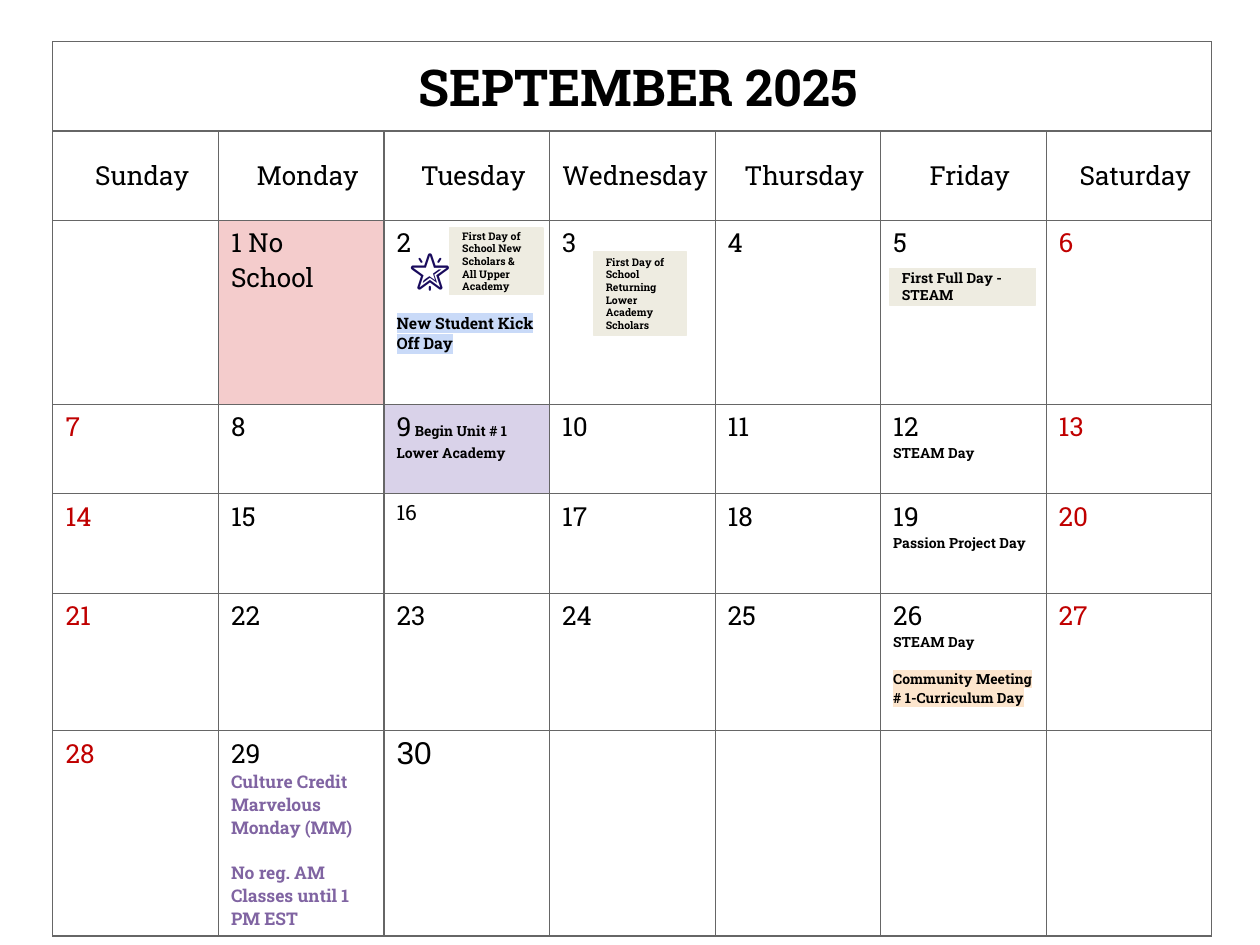
from dataclasses import dataclass

from lxml.etree import SubElement
from pptx import Presentation
from pptx.dml.color import RGBColor
from pptx.enum.shapes import MSO_SHAPE
from pptx.enum.text import MSO_ANCHOR, PP_ALIGN
from pptx.oxml import parse_xml
from pptx.oxml.ns import nsdecls, qn
from pptx.util import Inches, Pt

COLORS = {
    "text": "000000", "weekend": "C00000", "culture": "8064A2",
    "white": "FFFFFF", "border": "666666", "label": "EEECE1",
    "holiday": "F4CCCC", "unit": "D9D2E9", "kickoff": "C9DAF8",
    "meeting": "FCE5CD", "star": "180A5C",
}
FONT = "Roboto Slab"
WEEKDAYS = ["Sunday", "Monday", "Tuesday", "Wednesday", "Thursday", "Friday", "Saturday"]
ROW_HEIGHTS = [0.71, 0.71, 1.46, 0.71, 0.79, 1.09, 1.63]
COL_WIDTH = 1.314
LAST_DAY = 30
FIRST_COLUMN = 1  # the month starts on a Monday


@dataclass
class Run:
    text: str
    size: float = 15
    color: str = "text"
    bold: bool = False
    font: str = FONT
    highlight: str = ""


@dataclass
class Event:
    run: Run
    before: float = 0


@dataclass
class Label:
    text: str
    size: float
    left: float
    top: float
    width: float
    height: float


# Days whose first line is more than a plain date
DATE_LINES = {
    1: [Run("1 No School")],
    9: [Run("9"), Run(" Begin Unit # 1 Lower Academy", 8, bold=True)],
    16: [Run("16", 12)],
    30: [Run("30", 18, font="Arial")],
}
EVENTS = {
    2: [Event(Run("New Student Kick Off Day", 9, bold=True, highlight="kickoff"), 30)],
    12: [Event(Run("STEAM Day", 8, bold=True))],
    19: [Event(Run("Passion Project Day", 8, bold=True))],
    26: [Event(Run("STEAM Day", 8, bold=True)),
         Event(Run("Community Meeting # 1-Curriculum Day", 8, bold=True,
                   highlight="meeting"), 10.5)],
    29: [Event(Run("Culture Credit Marvelous Monday (MM)", 10, "culture", True)),
         Event(Run("No reg. AM Classes until 1 PM EST", 10, "culture", True), 13)],
}
DAY_FILLS = {1: "holiday", 9: "unit"}
LABELS = [
    Label("First Full Day - STEAM", 8, 7.06, 2.13, 1.16, 0.29),
    Label("First Day of School New Scholars & All Upper Academy", 6, 3.57, 1.81, 0.74, 0.53),
    Label("First Day of School Returning Lower Academy Scholars", 6, 4.71, 2, 0.74, 0.66),
]


def rgb(name: str) -> RGBColor:
    return RGBColor.from_string(COLORS[name])


def add_run(p, run: Run) -> None:
    r = p.add_run()
    r.text = run.text
    r.font.size = Pt(run.size)
    r.font.bold = run.bold
    r.font.name = run.font
    r.font.color.rgb = rgb(run.color)
    if run.highlight:
        highlight = parse_xml(
            f'<a:highlight {nsdecls("a")}>'
            f'<a:srgbClr val="{COLORS[run.highlight]}"/></a:highlight>')
        r.font._element.find(qn("a:solidFill")).addnext(highlight)


def set_margins(frame, left: float, top: float, right: float, bottom: float) -> None:
    frame.margin_left, frame.margin_top = Inches(left), Inches(top)
    frame.margin_right, frame.margin_bottom = Inches(right), Inches(bottom)


def style_cell(cell, fill: str = "white") -> None:
    cell.fill.solid()
    cell.fill.fore_color.rgb = rgb(fill)
    tc_pr = cell._tc.get_or_add_tcPr()
    for i, side in enumerate(("a:lnL", "a:lnR", "a:lnT", "a:lnB")):
        ln = tc_pr.makeelement(qn(side), {"w": str(Pt(0.75))})
        solid = SubElement(ln, qn("a:solidFill"))
        SubElement(solid, qn("a:srgbClr"), val=COLORS["border"])
        tc_pr.insert(i, ln)


def fill_day(cell, day: int, weekend: bool) -> None:
    set_margins(cell, 0.1, 0.04, 0.1, 0.04)
    tf = cell.text_frame
    plain = [Run(str(day), color="weekend" if weekend else "text")]
    for run in DATE_LINES.get(day, plain):
        add_run(tf.paragraphs[0], run)
    for event in EVENTS.get(day, []):
        p = tf.add_paragraph()
        p.space_before = Pt(event.before)
        add_run(p, event.run)


def add_calendar(slide) -> None:
    rows, cols = len(ROW_HEIGHTS), len(WEEKDAYS)
    table = slide.shapes.add_table(
        rows, cols, Inches(0.42), Inches(0.33),
        Inches(COL_WIDTH * cols), Inches(sum(ROW_HEIGHTS))).table
    table.first_row = table.horz_banding = False
    for column in table.columns:
        column.width = Inches(COL_WIDTH)
    for row, height in zip(table.rows, ROW_HEIGHTS):
        row.height = Inches(height)

    # Title row
    for col in range(cols):
        style_cell(table.cell(0, col))
    title = table.cell(0, 0)
    title.merge(table.cell(0, cols - 1))
    title.vertical_anchor = MSO_ANCHOR.MIDDLE
    set_margins(title, 0.1, 0.05, 0, 0.05)
    p = title.text_frame.paragraphs[0]
    p.alignment = PP_ALIGN.CENTER
    add_run(p, Run("SEPTEMBER 2025", 29, bold=True))

    # Weekday row
    for col, name in enumerate(WEEKDAYS):
        cell = table.cell(1, col)
        style_cell(cell)
        cell.vertical_anchor = MSO_ANCHOR.MIDDLE
        set_margins(cell, 0.1, 0, 0, 0)
        p = cell.text_frame.paragraphs[0]
        p.alignment = PP_ALIGN.LEFT if name == "Wednesday" else PP_ALIGN.CENTER
        add_run(p, Run(name))

    # Days
    for week in range(rows - 2):
        for col in range(cols):
            day = week * cols + col - FIRST_COLUMN + 1
            cell = table.cell(week + 2, col)
            style_cell(cell, DAY_FILLS.get(day, "white"))
            if 1 <= day <= LAST_DAY:
                fill_day(cell, day, weekend=col in (0, cols - 1))


def add_label(slide, label: Label) -> None:
    sp = slide.shapes.add_shape(
        MSO_SHAPE.RECTANGLE, Inches(label.left), Inches(label.top),
        Inches(label.width), Inches(label.height))
    sp.shadow.inherit = False
    sp.fill.solid()
    sp.fill.fore_color.rgb = rgb("label")
    sp.line.color.rgb = rgb("label")
    sp.line.width = Pt(0.75)
    tf = sp.text_frame
    tf.word_wrap = True
    tf.vertical_anchor = MSO_ANCHOR.MIDDLE
    set_margins(tf, 0.1, 0.1, 0.1, 0.1)
    p = tf.paragraphs[0]
    p.alignment = PP_ALIGN.LEFT
    add_run(p, Run(label.text, label.size, bold=True))


def add_star(slide) -> None:
    tf = slide.shapes.add_textbox(
        Inches(3.15), Inches(1.76), Inches(0.64), Inches(0.58)).text_frame
    tf.word_wrap = True
    set_margins(tf, 0.1, 0.1, 0.1, 0.1)
    p = tf.paragraphs[0]
    p.line_spacing = 1.2
    p.space_before = p.space_after = Pt(25)
    add_run(p, Run("🌟", 22.5, "star", True, "Arial"))


def main() -> None:
    prs = Presentation()
    prs.slide_width, prs.slide_height = Inches(10), Inches(7.5)
    slide = prs.slides.add_slide(prs.slide_layouts[6])
    add_calendar(slide)
    add_label(slide, LABELS[0])
    add_star(slide)
    for label in LABELS[1:]:
        add_label(slide, label)
    prs.save("out.pptx")


if __name__ == "__main__":
    main()
